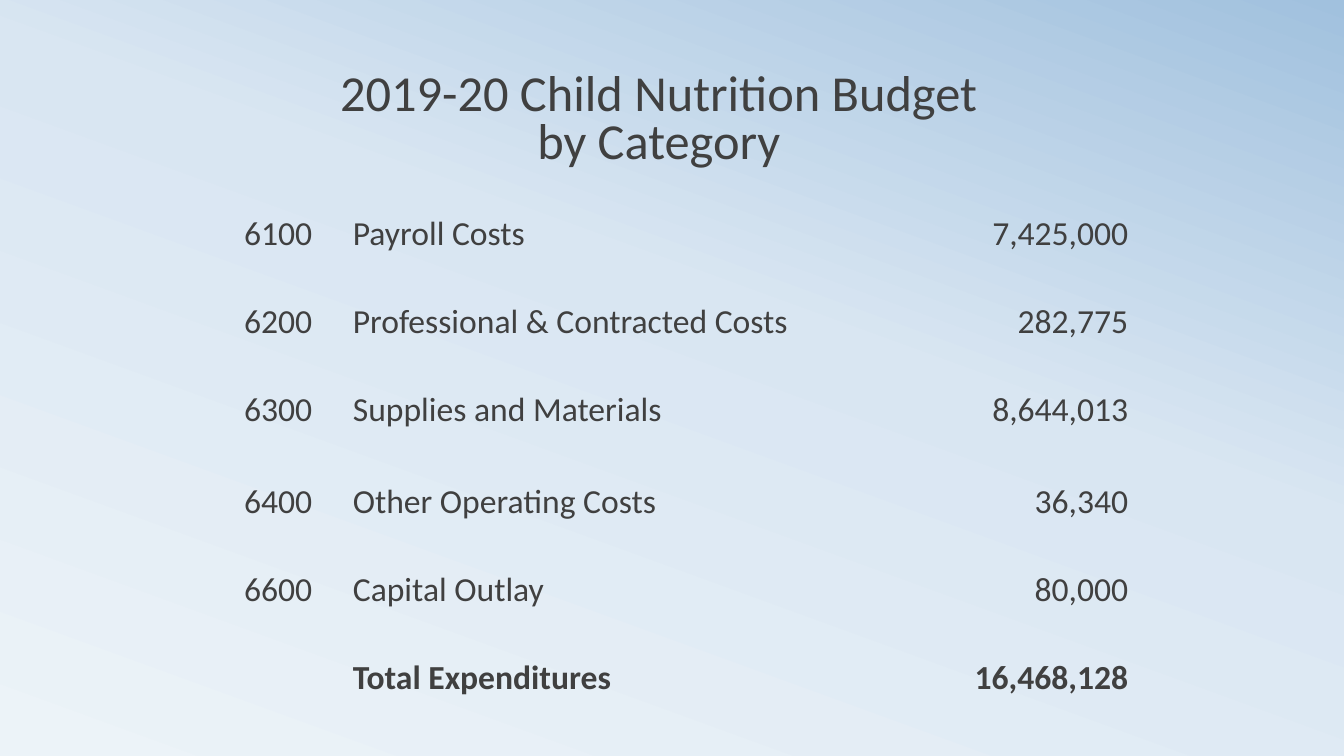
from copy import deepcopy
from dataclasses import dataclass

from pptx import Presentation
from pptx import util as u
from pptx.dml.color import RGBColor
from pptx.enum import text

FONT = "Calibri"
INK = RGBColor(0x40, 0x40, 0x40)
PALE = RGBColor(0xEC, 0xF3, 0xF8)
MIST = RGBColor(0xD9, 0xE6, 0xF2)
SKY = RGBColor(0xA1, 0xC1, 0xDE)
NO_STYLE = "{2D5ABB26-0587-4C30-8999-92F81FD0307C}"
ALIGN = text.PP_ALIGN
BOTTOM = text.MSO_ANCHOR.BOTTOM


@dataclass
class BudgetLine:
    code: str
    category: str
    amount: str
    height: float = 0.87
    bold: bool = False


BUDGET = [
    BudgetLine("6100", "Payroll Costs", "7,425,000"),
    BudgetLine("6200", "Professional & Contracted Costs", "282,775"),
    BudgetLine("6300", "Supplies and Materials", "8,644,013"),
    BudgetLine("6400", "Other Operating Costs", "36,340", height=0.92),
    BudgetLine("6600", "Capital Outlay", "80,000"),
    BudgetLine("", "Total Expenditures", "16,468,128", bold=True),
]
COLUMNS = [(1.36, ALIGN.CENTER), (5.23, ALIGN.LEFT), (2.58, ALIGN.RIGHT)]


def write(tf, content: str, *, size: float, align: ALIGN, bold: bool = False,
          spacing: float = 1.0, hanging: float = 0) -> None:
    p = tf.paragraphs[0]
    p.text = content
    p.alignment = align
    p.line_spacing = spacing
    if hanging:
        pPr = p._p.get_or_add_pPr()
        pPr.set("marL", str(u.Inches(hanging)))
        pPr.set("indent", str(-u.Inches(hanging)))
    for r in p.runs:
        r.font.name = FONT
        r.font.size = u.Pt(size)
        r.font.bold = bold
        r.font.color.rgb = INK


def paint_background(s) -> None:
    fill = s.background.fill
    fill.gradient()
    fill.gradient_angle = 70
    first = fill.gradient_stops[0]._gs
    first.addnext(deepcopy(first))
    stops = [(0, PALE), (0.58, MIST), (1, SKY)]
    for stop, (position, color) in zip(fill.gradient_stops, stops):
        stop.position = position
        stop.color.rgb = color


def add_title(s) -> None:
    sp = s.shapes.add_textbox(u.Inches(2.08), u.Inches(0.33), u.Inches(8.91), u.Inches(1.4))
    tf = sp.text_frame
    tf.word_wrap = True
    tf.vertical_anchor = BOTTOM
    write(tf, "2019-20 Child Nutrition Budget\vby Category",
          size=36, align=ALIGN.CENTER, spacing=0.8)


def add_budget(s) -> None:
    sp = s.shapes.add_table(len(BUDGET), len(COLUMNS), u.Inches(2.08), u.Inches(1.73),
                            u.Inches(9.17), u.Inches(5.25))
    table = sp.table
    table.first_row = False
    table.horz_banding = False
    table._tbl.tblPr.find("{*}tableStyleId").text = NO_STYLE
    for column, (width, _) in zip(table.columns, COLUMNS):
        column.width = u.Inches(width)
    for row, line in zip(table.rows, BUDGET):
        row.height = u.Inches(line.height)
        values = (line.code, line.category, line.amount)
        for cell, value, (_, align) in zip(row.cells, values, COLUMNS):
            cell.fill.background()
            cell.vertical_anchor = BOTTOM
            cell.margin_left = cell.margin_right = u.Inches(0.06)
            cell.margin_top = cell.margin_bottom = u.Inches(0.07)
            write(cell.text_frame, value, size=24, align=align, bold=line.bold, hanging=0.38)


def main() -> None:
    prs = Presentation()
    prs.slide_width = u.Inches(13.33)
    prs.slide_height = u.Inches(7.5)
    s = prs.slides.add_slide(prs.slide_layouts[6])
    paint_background(s)
    add_title(s)
    add_budget(s)
    prs.save("out.pptx")


if __name__ == "__main__":
    main()
